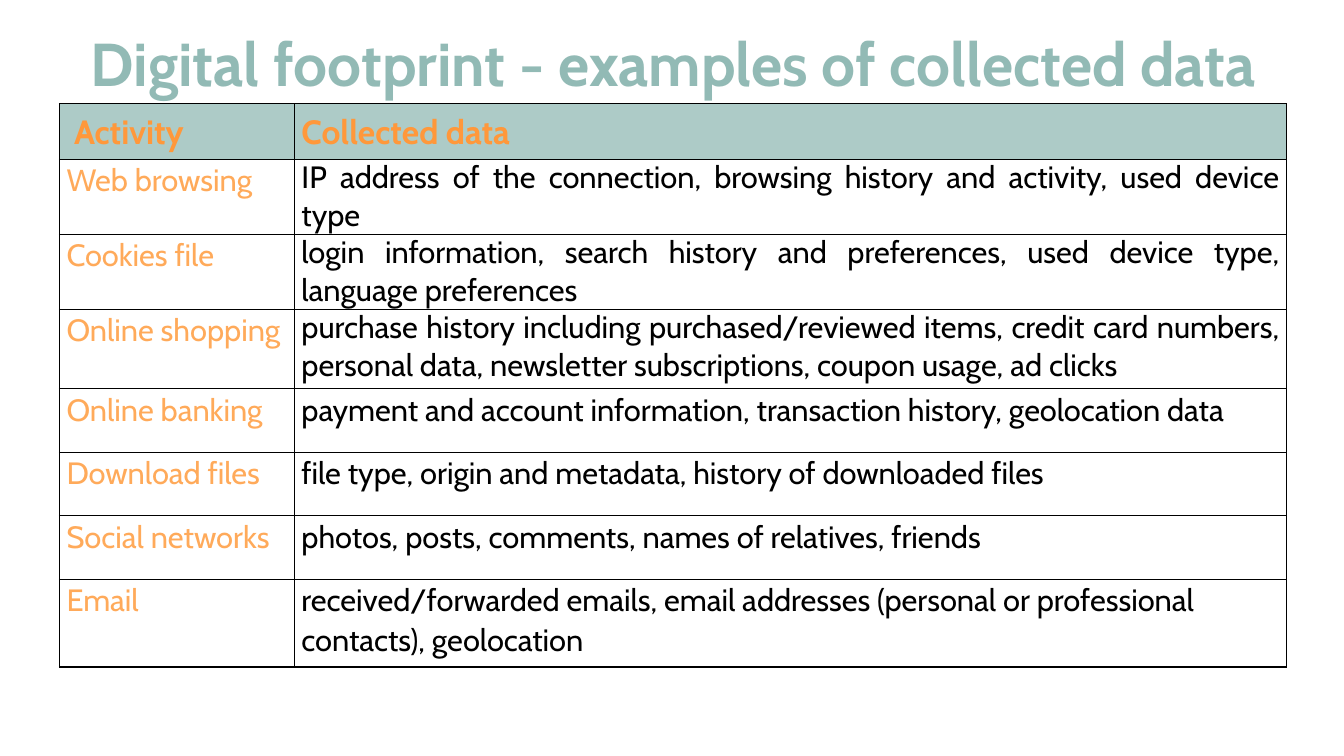
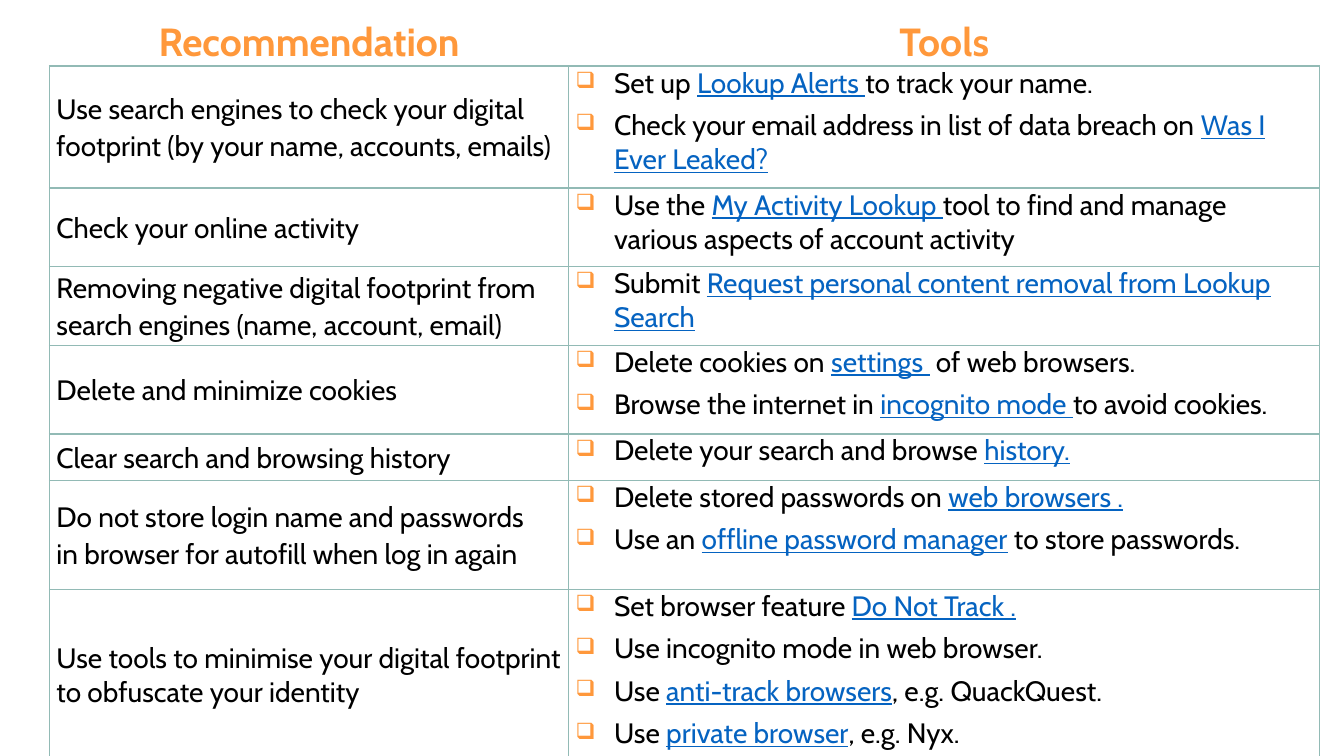
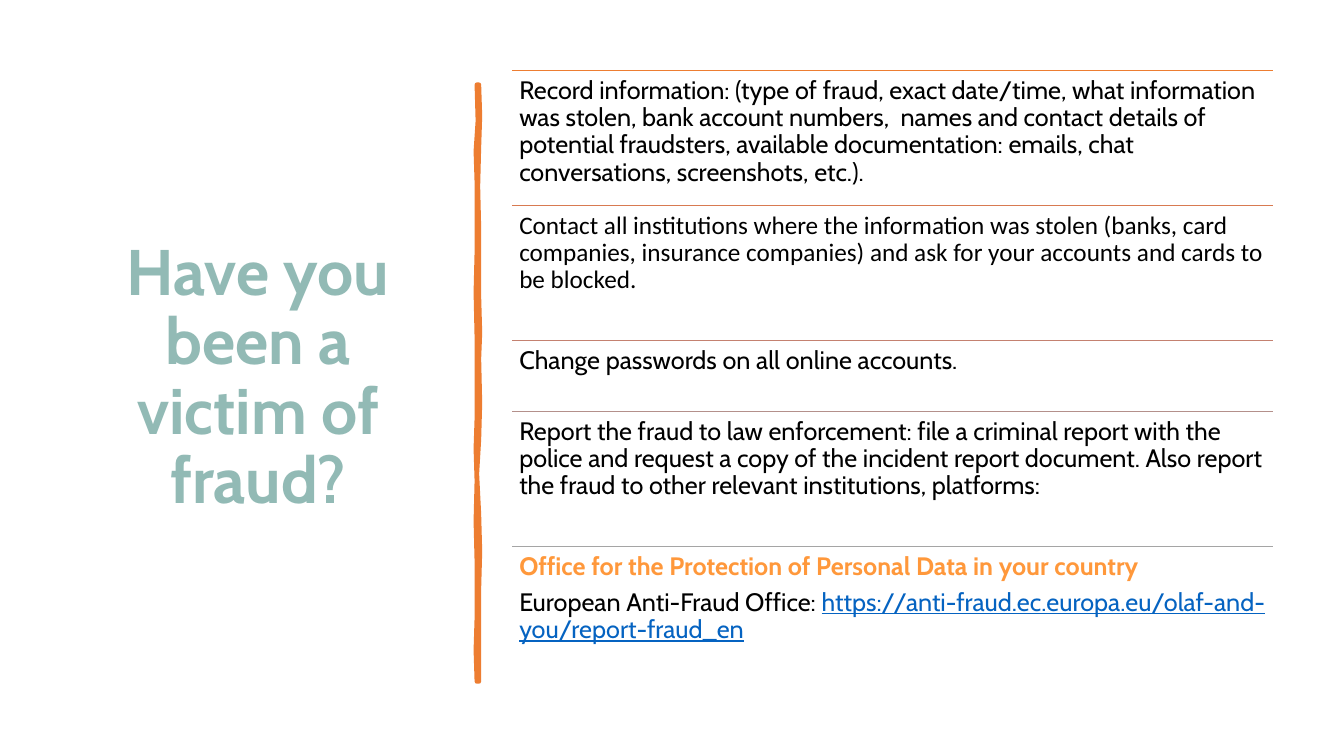
from lxml import etree
from pptx import Presentation
from pptx.dml.color import RGBColor
from pptx.enum import shapes, text
from pptx.oxml import ns
from pptx.util import Inches, Pt

COLORS = {
    "teal": "92BAB5", "orange": "FF983B", "light_orange": "FFAA5A",
    "black": "000000", "white": "FFFFFF", "link": "0563C1", "brush": "ED7D31",
}
FONT = "Cabin"
CENTER, JUSTIFY = text.PP_ALIGN.CENTER, text.PP_ALIGN.JUSTIFY
MIDDLE, TOP = text.MSO_ANCHOR.MIDDLE, text.MSO_ANCHOR.TOP
LOOSE = {"line_spacing": 1.07, "space_after": Pt(8)}
JUSTIFIED = {"alignment": JUSTIFY}
BULLETED = {"space_after": Pt(6)}
STEP = {"line_spacing": 0.9, "space_after": Pt(6.3)}

ACTIVITIES = [
    ("Web browsing", "IP address of the connection, browsing history and activity, used device type", JUSTIFIED),
    ("Cookies file", "login information, search history and preferences, used device type, language preferences", JUSTIFIED),
    ("Online shopping", "purchase history including purchased/reviewed items, credit card numbers, personal data, newsletter subscriptions, coupon usage, ad clicks", JUSTIFIED),
    ("Online banking", "payment and account information, transaction history, geolocation data", LOOSE),
    ("Download files", "file type, origin and metadata, history of downloaded files", LOOSE),
    ("Social networks", "photos, posts, comments, names of relatives, friends", LOOSE),
    ("Email", "received/forwarded emails, email addresses (personal or professional contacts), geolocation", LOOSE),
]

RECOMMENDATIONS = [
    ("Use search engines to check your digital footprint (by your name, accounts, emails)",
     ["Set up [Lookup Alerts ]to track your name.",
      "Check your email address in list of data breach on [Was I Ever Leaked?]"], LOOSE),
    ("Check your online activity",
     ["Use the [My Activity Lookup ]tool to find and manage various aspects of account activity"], LOOSE),
    ("Removing negative digital footprint from search engines (name, account, email)",
     ["Submit [Request personal content removal from Lookup Search]"], LOOSE),
    ("Delete and minimize cookies",
     ["Delete cookies on [settings ] of web browsers.",
      "Browse the internet in [incognito mode ]to avoid cookies."], LOOSE),
    ("Clear search and browsing history",
     ["Delete your search and browse [history.]"], LOOSE),
    ("Do not store login name and passwords \nin browser for autofill when log in again",
     ["Delete stored passwords on [web browsers .]",
      "Use an [offline password manager] to store passwords."], LOOSE),
    ("Use tools to minimise your digital footprint to obfuscate your identity",
     ["Set browser feature [Do Not Track .]",
      "Use incognito mode in web browser.",
      "Use [anti-track browsers], e.g. QuackQuest.",
      "Use [private browser], e.g. Nyx."], {}),
]

FRAUD_STEPS = [
    (1.34, "ED7D31", FONT, "Record information: (type of fraud, exact date/time, what information was stolen, bank account numbers,  names and contact details of potential fraudsters, available documentation: emails, chat conversations, screenshots, etc.)."),
    (1.34, "D87A51", "Calibri", "Contact all institutions where the information was stolen (banks, card companies, insurance companies) and ask for your accounts and cards to be blocked."),
    (0.7, "C48170", FONT, "Change passwords on all online accounts."),
    (1.34, "B4908B", FONT, "Report the fraud to law enforcement: file a criminal report with the police and request a copy of the incident report document. Also report the fraud to other relevant institutions, platforms:"),
]
CONTACTS = (1.34, "A5A5A5")

BRUSH_RIGHT = [
    (4.75, 0.84), (4.76, 1.15), (4.75, 1.46), (4.74, 1.85), (4.75, 2.26), (4.75, 2.94),
    (4.76, 3.3), (4.75, 3.56), (4.76, 4), (4.75, 4.36), (4.73, 4.7), (4.75, 5.1),
    (4.76, 5.47), (4.75, 5.84), (4.75, 6.76),
]
BRUSH_LEFT = [
    (4.73, 6.76), (4.72, 6.45), (4.73, 6.13), (4.73, 5.57), (4.72, 5.17), (4.73, 4.77),
    (4.72, 4.45), (4.73, 4.15), (4.73, 3.35), (4.72, 2.9), (4.73, 2.5), (4.73, 1.81),
    (4.72, 1.5), (4.74, 1.2), (4.73, 0.84),
]


def rgb(color):
    return RGBColor.from_string(COLORS.get(color, color))


def apply(obj, values):
    for name, value in values.items():
        setattr(obj, name, value)


def child(parent, tag, **attrs):
    return etree.SubElement(parent, ns.qn(tag), attrs)


def add_run(p, content, size, color, bold=False, underline=False, font=FONT):
    for i, line in enumerate(content.split("\n")):
        if i:
            p.add_line_break()
        r = p.add_run()
        r.text = line
        apply(r.font, {"name": font, "size": Pt(size), "bold": bold, "underline": underline})
        r.font.color.rgb = rgb(color)


def write(p, content, size, color="black", fmt=None, bold=False, font=FONT):
    apply(p, fmt or {})
    for i, part in enumerate(content.replace("]", "[").split("[")):
        if part:
            linked = i % 2 == 1
            add_run(p, part, size, "link" if linked else color, bold, linked, font)


def add_bullet(p):
    pPr = p._p.get_or_add_pPr()
    pPr.set("marL", str(Inches(0.38)))
    pPr.set("indent", str(Inches(-0.38)))
    child(child(pPr, "a:buClr"), "a:srgbClr", val=COLORS["orange"])
    child(pPr, "a:buSzPct", val="80000")
    child(pPr, "a:buChar", char="❑")


def set_borders(cell, color, sides="LRTB"):
    tcPr = cell._tc.get_or_add_tcPr()
    for i, side in enumerate(sides):
        ln = child(tcPr, f"a:ln{side}", w=str(Pt(1)))
        child(child(ln, "a:solidFill"), "a:srgbClr", val=COLORS[color])
        tcPr.insert(i, ln)


def fill_cell(cell, color=None, alpha=None):
    if color is None:
        cell.fill.background()
        return
    cell.fill.solid()
    cell.fill.fore_color.rgb = rgb(color)
    if alpha:
        clr = cell._tc.tcPr.find(".//" + ns.qn("a:srgbClr"))
        child(clr, "a:alpha", val=str(alpha * 1000))


def add_grid(s, left, top, widths, heights):
    frame = s.shapes.add_table(len(heights), len(widths), Inches(left), Inches(top),
                               Inches(sum(widths)), Inches(sum(heights)))
    table = frame.table
    apply(table, {"first_row": False, "horz_banding": False})
    for column, width in zip(table.columns, widths):
        column.width = Inches(width)
    for row, height in zip(table.rows, heights):
        row.height = Inches(height)
    for cell in table.iter_cells():
        apply(cell, {"margin_left": Inches(0.07), "margin_right": Inches(0.07),
                     "margin_top": 0, "margin_bottom": 0})
    return table


def add_title_slide(prs, content, box, size):
    s = prs.slides.add_slide(prs.slide_layouts[5])
    title = s.shapes.title
    apply(title, dict(zip(("left", "top", "width", "height"), map(Inches, box))))
    tf = title.text_frame
    apply(tf, {"word_wrap": True, "auto_size": text.MSO_AUTO_SIZE.NONE, "vertical_anchor": MIDDLE})
    write(tf.paragraphs[0], content, size, "teal", {"alignment": CENTER, "line_spacing": 0.9}, True)
    return s


def add_rule(s, left, right, y, color):
    line = s.shapes.add_connector(shapes.MSO_CONNECTOR.STRAIGHT, Inches(left), Inches(y),
                                  Inches(right), Inches(y))
    line.line.color.rgb = rgb(color)
    line.line.width = Pt(1)
    child(line._element.spPr, "a:effectLst")


def add_step(s, y, height, color):
    left, width = 5.08, 7.55
    add_rule(s, left, left + width, y, color)
    tf = s.shapes.add_textbox(Inches(left), Inches(y), Inches(width), Inches(height)).text_frame
    apply(tf, {"word_wrap": True, "vertical_anchor": TOP})
    apply(tf, dict.fromkeys(("margin_left", "margin_top", "margin_right", "margin_bottom"), Inches(0.07)))
    return tf


def add_brush_line(s):
    points = [(Inches(x), Inches(y)) for x, y in BRUSH_RIGHT + BRUSH_LEFT]
    builder = s.shapes.build_freeform(*points[0])
    builder.add_line_segments(points[1:], close=True)
    sp = builder.convert_to_shape()
    sp.shadow.inherit = False
    sp.fill.solid()
    sp.fill.fore_color.rgb = rgb("brush")
    sp.line.color.rgb = rgb("brush")
    sp.line.width = Pt(3.25)


def build_collected_data(prs):
    s = add_title_slide(prs, "Digital footprint - examples of collected data",
                        (0.42, 0.21, 12.51, 0.91), 43.2)
    table = add_grid(s, 0.59, 1.03, [2.33, 9.84], [0.55, 0.74, 0.74, 0.79, 0.63, 0.63, 0.63, 0.87])
    for cell, heading in zip(table.rows[0].cells, (" Activity", "Collected data")):
        cell.vertical_anchor = MIDDLE
        fill_cell(cell, "teal", 75)
        write(cell.text_frame.paragraphs[0], heading, 24, "orange", {"line_spacing": 1.07}, True)
    for i, (activity, data, fmt) in enumerate(ACTIVITIES, 1):
        name_cell, data_cell = table.rows[i].cells
        write(name_cell.text_frame.paragraphs[0], activity, 22, "light_orange", LOOSE)
        write(data_cell.text_frame.paragraphs[0], data, 22, fmt=fmt)
        fill_cell(name_cell, "white")
        fill_cell(data_cell, "white")
    for cell in table.iter_cells():
        set_borders(cell, "black")


def build_recommendations(prs):
    s = prs.slides.add_slide(prs.slide_layouts[6])
    table = add_grid(s, 0.49, 0.15, [5.15, 7.45], [0.5, 1.21, 0.78, 0.78, 0.88, 0.46, 1.08, 1.71])
    for cell, heading in zip(table.rows[0].cells, ("Recommendation", "Tools")):
        write(cell.text_frame.paragraphs[0], heading, 28, "orange", {"alignment": CENTER, **LOOSE}, True)
        fill_cell(cell)
        set_borders(cell, "teal", "B")
    for i, (advice, tools, fmt) in enumerate(RECOMMENDATIONS, 1):
        advice_cell, tools_cell = table.rows[i].cells
        advice_cell.vertical_anchor = MIDDLE
        write(advice_cell.text_frame.paragraphs[0], advice, 20, fmt=fmt)
        tf = tools_cell.text_frame
        for j, tool in enumerate(tools):
            p = tf.add_paragraph() if j else tf.paragraphs[0]
            write(p, tool, 20, fmt=BULLETED)
            add_bullet(p)
        for cell in (advice_cell, tools_cell):
            fill_cell(cell)
            set_borders(cell, "teal")


def build_fraud_steps(prs):
    s = add_title_slide(prs, "Have you been a victim of fraud?", (0.69, 0.7, 3.74, 6.11), 46)
    add_brush_line(s)
    y = 0.7
    for height, color, font, content in FRAUD_STEPS:
        tf = add_step(s, y, height, color)
        write(tf.paragraphs[0], content, 18, fmt=STEP, font=font)
        y += height
    tf = add_step(s, y, *CONTACTS)
    write(tf.paragraphs[0], "Office for the Protection of Personal Data in your country",
          18, "orange", STEP, True)
    write(tf.add_paragraph(),
          "European Anti-Fraud Office: [https://anti-fraud.ec.europa.eu/olaf-and-you/report-fraud_en]",
          18, fmt=STEP)


def main():
    prs = Presentation()
    apply(prs, {"slide_width": Inches(13.33), "slide_height": Inches(7.5)})
    build_collected_data(prs)
    build_recommendations(prs)
    build_fraud_steps(prs)
    prs.save("out.pptx")


if __name__ == "__main__":
    main()
